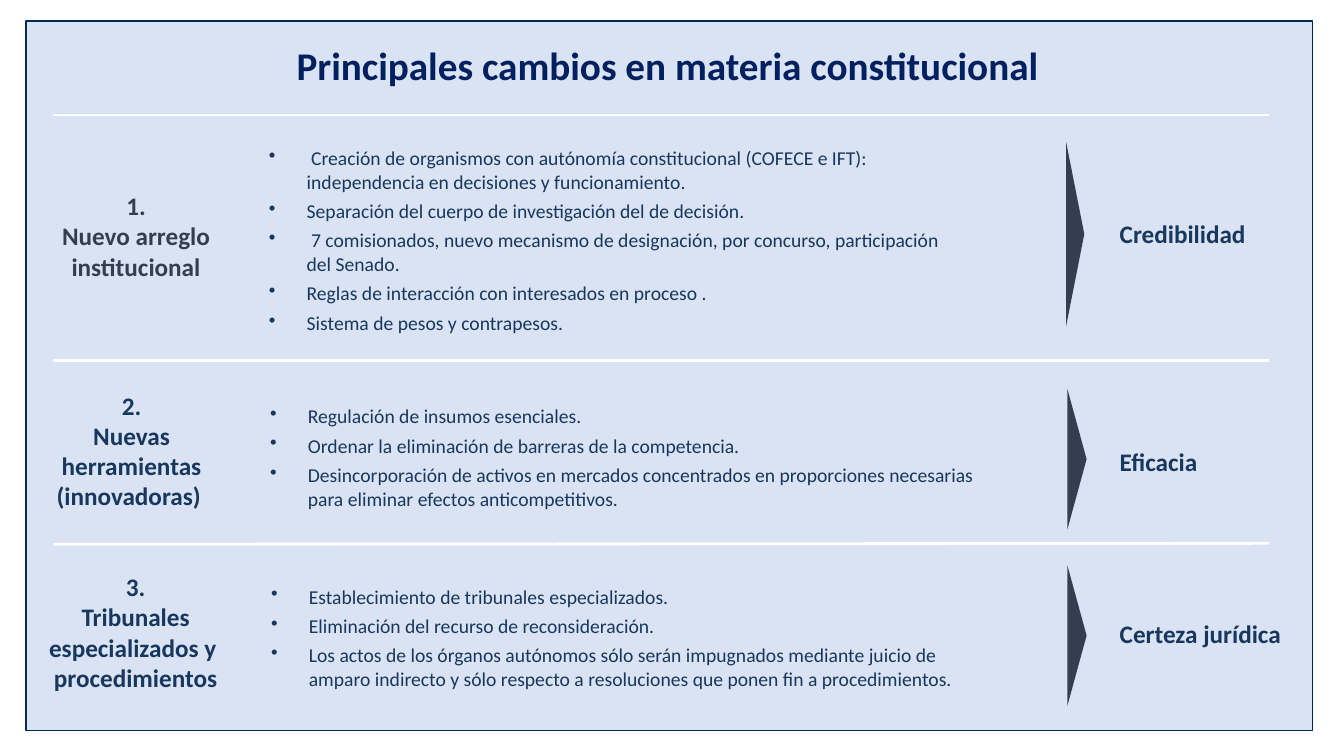
import pptx
import pptx.util
import pptx.dml.color
import pptx.enum.shapes
import pptx.enum.text
import pptx.oxml
import pptx.oxml.ns
from lxml import etree

Pt = pptx.util.Pt
Shape = pptx.enum.shapes.MSO_SHAPE
Align = pptx.enum.text.PP_ALIGN
NAVY, SLATE = "17375E", "333F50"


def paint(target, color):
    """Give a fill or a line one solid colour."""
    fill = target if hasattr(target, "solid") else target.fill
    fill.solid()
    fill.fore_color.rgb = pptx.dml.color.RGBColor.from_string(color)


def write(place, lines, size, color, bold=True, align=Align.LEFT, dots=False):
    """Add a text box with one paragraph per line, bulleted if dots is set."""
    frame = slide.shapes.add_textbox(*map(Pt, place)).text_frame
    frame.word_wrap = True
    frame.text = "\n".join(lines)
    for para in frame.paragraphs:
        para.alignment = align
        if dots:
            props = para._p.get_or_add_pPr()
            props.set("marL", str(Pt(27)))
            props.set("indent", str(Pt(-27)))
            etree.SubElement(props, pptx.oxml.ns.qn("a:buChar")).set("char", "•")
            para.space_after = Pt(4.2)
        for run in para.runs:
            run.font.name = "Calibri"
            run.font.size = Pt(size)
            run.font.bold = bold
            paint(run.font.fill, color)


deck = pptx.Presentation()
deck.slide_width, deck.slide_height = Pt(960), Pt(540)
slide = deck.slides.add_slide(deck.slide_layouts[6])

panel = slide.shapes.add_shape(Shape.RECTANGLE, Pt(18.7), Pt(15.1), Pt(918.7), Pt(506.9))
panel.shadow.inherit = False
paint(panel.fill, "DAE3F3")
paint(panel.line, "002C53")
panel.line.width = Pt(1)

write((139.7, 25.9, 680.4, 41), ["Principales cambios en materia constitucional "],
      28, "002060", align=Align.CENTER)

# Each row: heading, its place and colour; points and place; arrow; outcome
rows = [
    (["1.", "Nuevo arreglo", "institucional"], (31.7, 132.5, 131, 72.7), SLATE,
     [" Creación de organismos con autónomía constitucional (COFECE e IFT): "
      "independencia en decisiones y funcionamiento.",
      "Separación del cuerpo de investigación del de decisión.",
      " 7 comisionados, nuevo mecanismo de designación, por concurso, "
      "participación del Senado.",
      "Reglas de interacción con interesados en proceso .",
      "Sistema de pesos y contrapesos."], (185, 100.8, 509, 141.8),
     (768, 167.2, 131.8, 13), "Credibilidad", 152.6),
    (["2.", "Nuevas herramientas", "(innovadoras) "], (24.5, 275, 139, 94.3), NAVY,
     ["Regulación de insumos esenciales.",
      "Ordenar la eliminación de barreras de la competencia.",
      "Desincorporación de activos en mercados concentrados en proporciones "
      "necesarias para eliminar efectos anticompetitivos."],
     (185.8, 285.1, 531.4, 82.8),
     (769.3, 328, 100.1, 13.7), "Eficacia", 315.4),
    (["3.", "Tribunales especializados y ", "procedimientos"],
     (27.4, 404.6, 139, 94.3), NAVY,
     ["Establecimiento de tribunales especializados.",
      "Eliminación del recurso de reconsideración.",
      "Los actos de los órganos autónomos sólo serán impugnados mediante juicio "
      "de amparo indirecto y sólo respecto a resoluciones que ponen fin a "
      "procedimientos."], (186.5, 414, 526.3, 82.8),
     (769.3, 454, 100.1, 13.7), "Certeza jurídica", 437.8),
]
for head, spot, color, points, area, (mid, level, span, depth), goal, top in rows:
    write(spot, head, 18, color, align=Align.CENTER)
    write(area, points, 14, NAVY, bold=False, dots=True)
    write((792.7, top, 138.2, 28.8), [goal], 18, NAVY)
    arrow = slide.shapes.add_shape(Shape.ISOSCELES_TRIANGLE, Pt(mid - span / 2),
                                   Pt(level - depth / 2), Pt(span), Pt(depth))
    arrow.rotation = 90
    arrow.shadow.inherit = False
    paint(arrow.fill, SLATE)
    arrow.line.fill.background()

for start, end in [(82.1, 82.1), (257.8, 257.8), (388.8, 388.1)]:
    rule = slide.shapes.add_connector(pptx.enum.shapes.MSO_CONNECTOR.STRAIGHT,
                                      Pt(38.2), Pt(start), Pt(906.5), Pt(end))
    paint(rule.line, "FFFFFF")
    rule.line.width = Pt(2)
    etree.SubElement(rule._element.spPr, pptx.oxml.ns.qn("a:effectLst"))

deck.save("out.pptx")
